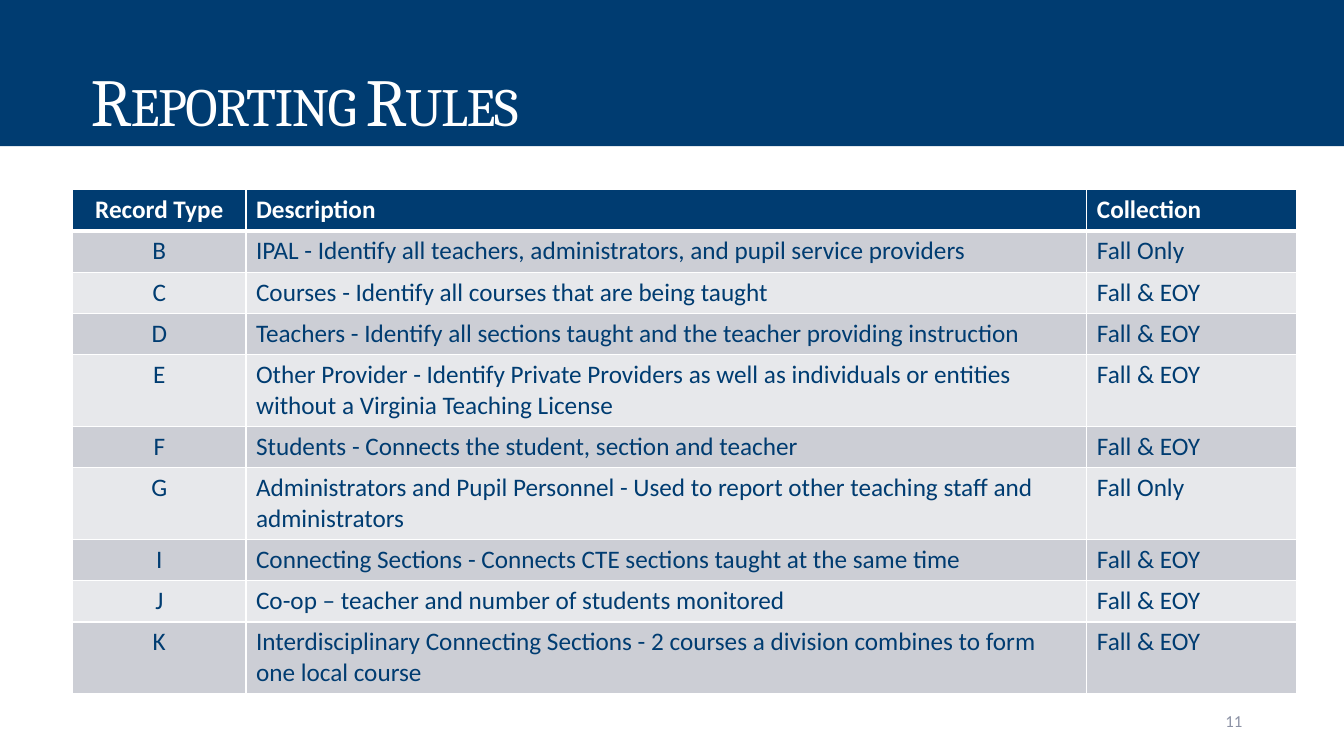
import dataclasses

import lxml.etree
import pptx
import pptx.dml.color
import pptx.enum.shapes
import pptx.enum.text
import pptx.oxml.ns
import pptx.util

Inches = pptx.util.Inches
Align = pptx.enum.text.PP_ALIGN
Anchor = pptx.enum.text.MSO_ANCHOR


@dataclasses.dataclass(frozen=True)
class Theme:
    navy: str = "003C71"
    white: str = "FFFFFF"
    grey: str = "8C92A5"
    bands: tuple[str, str] = ("CCCED5", "E7E8EB")
    heading_font: str = "Cambria"
    body_font: str = "Calibri"
    title_size: int = 48
    table_size: int = 18
    number_size: int = 12
    rule: int = 1
    header_rule: int = 3


@dataclasses.dataclass(frozen=True)
class Record:
    kind: str
    description: str
    collection: str = "Fall & EOY"


THEME = Theme()
HEADER = Record("Record Type", "Description", "Collection")
RECORDS = [
    Record("B", "IPAL - Identify all teachers, administrators, and pupil service providers", "Fall Only"),
    Record("C", "Courses - Identify all courses that are being taught"),
    Record("D", "Teachers - Identify all sections taught and the teacher providing instruction"),
    Record("E", "Other Provider - Identify Private Providers as well as individuals or entities "
                "without a Virginia Teaching License"),
    Record("F", "Students - Connects the student, section and teacher"),
    Record("G", "Administrators and Pupil Personnel - Used to report other teaching staff and "
                "administrators", "Fall Only"),
    Record("I", "Connecting Sections - Connects CTE sections taught at the same time"),
    Record("J", "Co-op – teacher and number of students monitored"),
    Record("K", "Interdisciplinary Connecting Sections - 2 courses a division combines to form "
                "one local course"),
]
COLUMN_WIDTHS = (1.72, 8.34, 2.08)
ROW_HEIGHT = 0.41


def rgb(colour: str) -> pptx.dml.color.RGBColor:
    return pptx.dml.color.RGBColor.from_string(colour)


def style(paragraph, font: str, size: int, colour: str, align=Align.LEFT, bold: bool = False) -> None:
    paragraph.alignment = align
    paragraph.font.name = font
    paragraph.font.size = pptx.util.Pt(size)
    paragraph.font.bold = bold
    paragraph.font.color.rgb = rgb(colour)


def add_title(slide, text: str) -> None:
    banner = slide.shapes.add_shape(
        pptx.enum.shapes.MSO_SHAPE.RECTANGLE, 0, 0, Inches(13.33), Inches(1.45))
    banner.shadow.inherit = False
    banner.fill.solid()
    banner.fill.fore_color.rgb = rgb(THEME.navy)
    banner.line.fill.background()
    frame = banner.text_frame
    frame.word_wrap = True
    frame.vertical_anchor = Anchor.BOTTOM
    frame.margin_left = Inches(0.9)
    heading = frame.paragraphs[0]
    heading.line_spacing = 0.9
    run = heading.add_run()
    run.text = text
    style(heading, THEME.heading_font, THEME.title_size, THEME.white)
    # Small capitals, set slightly tight
    properties = run.font._element
    properties.set("cap", "small")
    properties.set("spc", "-100")


def add_borders(cell, bottom: int) -> None:
    properties = cell._tc.get_or_add_tcPr()
    widths = {"lnL": THEME.rule, "lnR": THEME.rule, "lnT": THEME.rule, "lnB": bottom}
    for position, (tag, width) in enumerate(widths.items()):
        line = lxml.etree.Element(pptx.oxml.ns.qn(f"a:{tag}"), w=str(pptx.util.Pt(width)))
        fill = lxml.etree.SubElement(line, pptx.oxml.ns.qn("a:solidFill"))
        lxml.etree.SubElement(fill, pptx.oxml.ns.qn("a:srgbClr"), val=THEME.white)
        properties.insert(position, line)


def add_record_table(slide, records: list[Record]) -> None:
    rows = [HEADER, *records]
    table = slide.shapes.add_table(
        len(rows), len(COLUMN_WIDTHS), Inches(0.72), Inches(1.88),
        Inches(sum(COLUMN_WIDTHS)), Inches(ROW_HEIGHT * len(rows))).table
    for column, width in zip(table.columns, COLUMN_WIDTHS):
        column.width = Inches(width)
    for row_index, record in enumerate(rows):
        table.rows[row_index].height = Inches(ROW_HEIGHT)
        is_header = row_index == 0
        fill = THEME.navy if is_header else THEME.bands[(row_index - 1) % 2]
        colour = THEME.white if is_header else THEME.navy
        for column_index, text in enumerate(dataclasses.astuple(record)):
            cell = table.cell(row_index, column_index)
            cell.text = text
            cell.fill.solid()
            cell.fill.fore_color.rgb = rgb(fill)
            align = Align.CENTER if column_index == 0 else Align.LEFT
            style(cell.text_frame.paragraphs[0], THEME.body_font, THEME.table_size,
                  colour, align, is_header)
            add_borders(cell, THEME.header_rule if is_header else THEME.rule)


def add_slide_number(slide, number: str) -> None:
    box = slide.shapes.add_textbox(Inches(9.42), Inches(6.95), Inches(3), Inches(0.4))
    frame = box.text_frame
    frame.word_wrap = True
    frame.vertical_anchor = Anchor.MIDDLE
    frame.text = number
    style(frame.paragraphs[0], THEME.body_font, THEME.number_size, THEME.grey, Align.RIGHT)


def main() -> None:
    deck = pptx.Presentation()
    deck.slide_width = Inches(13.33)
    deck.slide_height = Inches(7.5)
    slide = deck.slides.add_slide(deck.slide_layouts[6])
    # Title banner
    add_title(slide, "Reporting Rules")
    # Record types
    add_record_table(slide, RECORDS)
    # Footer
    add_slide_number(slide, "11")
    deck.save("out.pptx")


if __name__ == "__main__":
    main()
